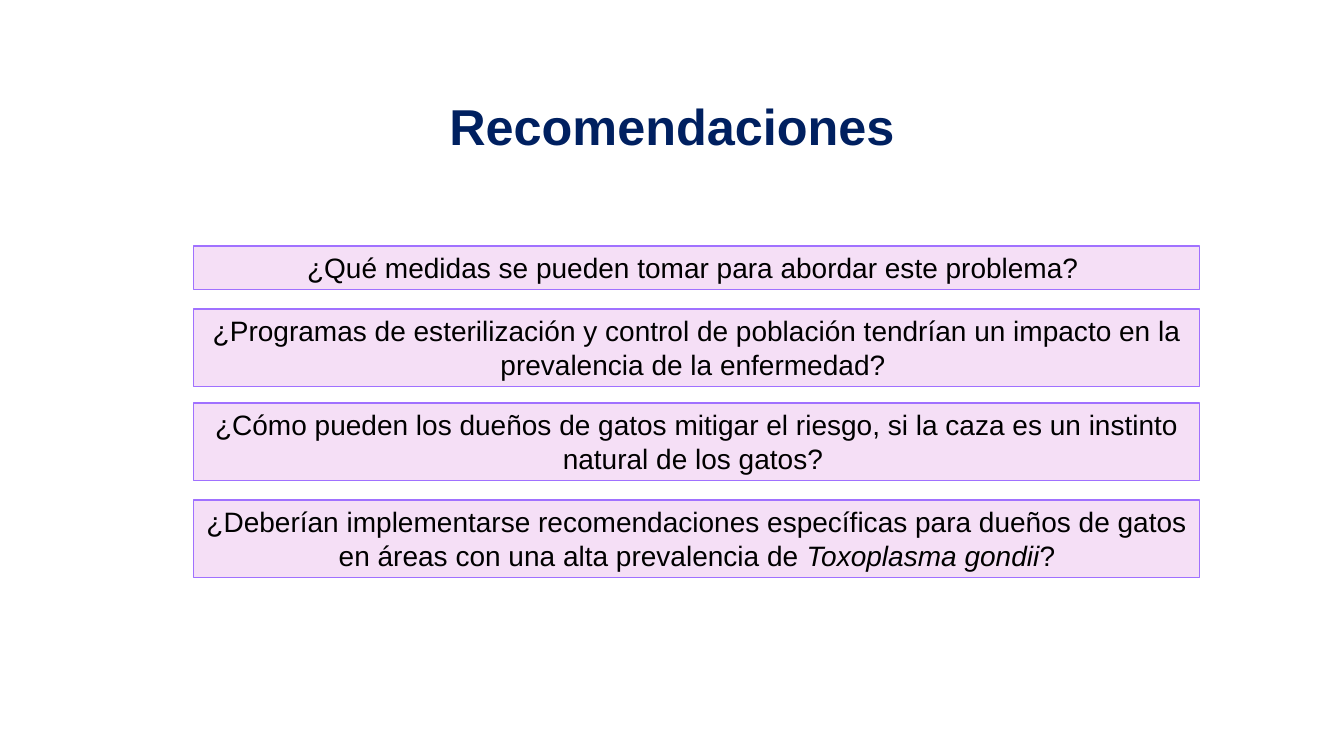
from lxml import etree
from pptx import Presentation
from pptx.dml.color import RGBColor
from pptx.enum.shapes import MSO_SHAPE as Shape
from pptx.enum.text import MSO_ANCHOR as Anchor, MSO_AUTO_SIZE as AutoSize, PP_ALIGN as Align
from pptx.oxml.ns import qn
from pptx.util import Emu, Pt

TITLE = "Recomendaciones"
# Top, height and text runs (text, italic) of each question
QUESTIONS = [
    (246, 44, [("¿Qué medidas se pueden tomar para abordar este problema? ", False)]),
    (309, 78, [("¿Programas de esterilización y control de población tendrían un impacto "
                "en la prevalencia de la enfermedad? ", False)]),
    (403, 78, [("¿Cómo pueden los dueños de gatos mitigar el riesgo, si la caza es un "
                "instinto natural de los gatos? ", False)]),
    (500, 78, [("¿Deberían implementarse recomendaciones específicas para dueños de gatos "
                "en áreas con una alta prevalencia de ", False),
               ("Toxoplasma gondii", True), ("?", False)]),
]
BOX_LEFT, BOX_WIDTH = 194, 1006
TITLE_AREA = (36, 81, 1272, 97)
FONT = "Arial"
NAVY = RGBColor(0x00, 0x20, 0x60)
PINK = RGBColor(0xE6, 0xAC, 0xE8)
VIOLET = RGBColor(0xA0, 0x71, 0xFF)
BLACK = RGBColor(0, 0, 0)
PINK_OPACITY = 38


def px(length):
    return Emu(round(length * 914400 / 100.8))


def format_span(span, size, color, bold=False, italic=False):
    font = span.font
    font.name, font.size, font.bold, font.italic = FONT, Pt(size), bold, italic
    font.color.rgb = color


def add_title(slide):
    title = slide.shapes.title
    title.left, title.top, title.width, title.height = map(px, TITLE_AREA)
    frame = title.text_frame
    frame.text = TITLE
    frame.vertical_anchor = Anchor.MIDDLE
    para = frame.paragraphs[0]
    para.alignment, para.line_spacing = Align.CENTER, 0.9
    format_span(para.runs[0], 36, NAVY, bold=True)


def add_question(slide, top, height, spans):
    box = slide.shapes.add_shape(
        Shape.RECTANGLE, px(BOX_LEFT), px(top), px(BOX_WIDTH), px(height))
    box.shadow.inherit = False
    box.fill.solid()
    box.fill.fore_color.rgb = PINK
    color = box._element.spPr.find(qn("a:solidFill"))[0]
    etree.SubElement(color, qn("a:alpha")).set("val", str(PINK_OPACITY * 1000))
    box.line.color.rgb = VIOLET
    box.line.width = Pt(0.75)
    frame = box.text_frame
    frame.word_wrap = True
    frame.auto_size = AutoSize.SHAPE_TO_FIT_TEXT
    frame.vertical_anchor = Anchor.TOP
    para = frame.paragraphs[0]
    para.alignment = Align.CENTER
    for text, italic in spans:
        span = para.add_run()
        span.text = text
        format_span(span, 20, BLACK, italic=italic)


def main():
    deck = Presentation()
    deck.slide_width, deck.slide_height = px(1344), px(756)
    slide = deck.slides.add_slide(deck.slide_layouts[5])
    add_title(slide)
    for question in QUESTIONS:
        add_question(slide, *question)
    deck.save("out.pptx")


if __name__ == "__main__":
    main()
